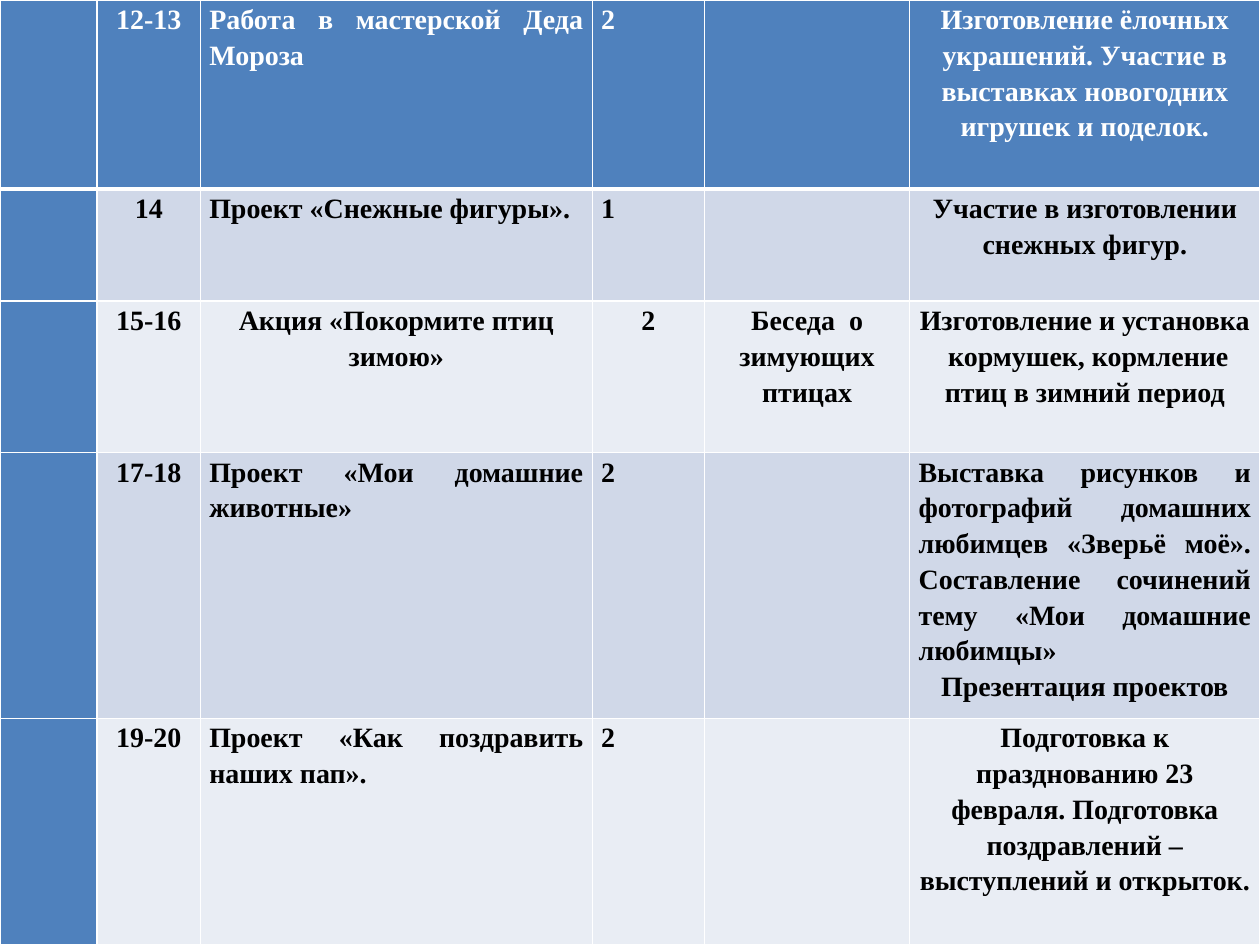
from lxml import etree
from pptx import Presentation
from pptx.dml.color import RGBColor
from pptx.enum.text import PP_ALIGN
from pptx.oxml.ns import qn
from pptx.util import Cm, Pt

CENTER = PP_ALIGN.CENTER
JUSTIFY = PP_ALIGN.JUSTIFY

BLUE, WHITE, BLACK = "4F81BD", "FFFFFF", "000000"
BANDS = ["E9EDF4", "D0D8E8"]
COLUMN_WIDTHS = [1.96, 2.08, 7.9, 2.26, 4.14, 7.06]
ROW_HEIGHTS = [3.81, 2.26, 3.05, 5.36, 4.57]

# Lesson numbers, topic, hours, theory, practice; each cell lists its paragraphs
LESSONS = [
    [[("12-13", CENTER)],
     [("Работа в мастерской Деда Мороза", JUSTIFY)],
     [("2", JUSTIFY)],
     [],
     [("Изготовление ёлочных украшений. Участие в выставках новогодних "
       "игрушек и поделок.", CENTER)]],
    [[("14", CENTER)],
     [("Проект «Снежные фигуры».", JUSTIFY)],
     [("1", JUSTIFY)],
     [],
     [("Участие в изготовлении снежных фигур.", CENTER)]],
    [[("15-16", CENTER)],
     [("Акция «Покормите птиц зимою»", CENTER)],
     [("2", CENTER)],
     [("Беседа  о зимующих птицах", CENTER)],
     [("Изготовление и установка  кормушек, кормление птиц в зимний период",
       CENTER)]],
    [[("17-18", CENTER)],
     [("Проект «Мои домашние животные»", JUSTIFY)],
     [("2", JUSTIFY)],
     [],
     [("Выставка рисунков и фотографий домашних любимцев «Зверьё моё». "
       "Составление сочинений тему «Мои домашние любимцы»", JUSTIFY),
      ("Презентация проектов", CENTER)]],
    [[("19-20", CENTER)],
     [("Проект «Как поздравить наших пап».", JUSTIFY)],
     [("2", JUSTIFY)],
     [],
     [("Подготовка к празднованию 23 февраля. Подготовка поздравлений – "
       "выступлений и открыток.", CENTER)]],
]


def write(paragraph, text, align=CENTER, color=BLACK):
    paragraph.alignment = align
    paragraph.line_spacing = 1.15
    run = paragraph.add_run()
    run.text = text
    run.font.name = "Times New Roman"
    run.font.size = Pt(16)
    run.font.bold = True
    run.font.color.rgb = RGBColor.from_string(color)


def add_border(cell, side, width):
    line = etree.SubElement(cell._tc.get_or_add_tcPr(), qn("a:ln" + side),
                            w=str(Pt(width)))
    fill = etree.SubElement(line, qn("a:solidFill"))
    etree.SubElement(fill, qn("a:srgbClr"), val=WHITE)


presentation = Presentation()
presentation.slide_width = Cm(25.4)
presentation.slide_height = Cm(19.05)
slide = presentation.slides.add_slide(presentation.slide_layouts[6])

# Table grid
shape = slide.shapes.add_table(len(ROW_HEIGHTS), len(COLUMN_WIDTHS), Cm(0), Cm(0),
                               Cm(sum(COLUMN_WIDTHS)), Cm(sum(ROW_HEIGHTS)))
table = shape.table
table.first_col = True
for column, width in zip(table.columns, COLUMN_WIDTHS):
    column.width = Cm(width)
for row, height in zip(table.rows, ROW_HEIGHTS):
    row.height = Cm(height)

# Cells: blue header row and first column, banded body
for row_index, lesson in enumerate(LESSONS):
    header = row_index == 0
    for column_index, paragraphs in enumerate([[]] + lesson):
        cell = table.cell(row_index, column_index)
        borders = {"L": 1, "R": 1, "T": 3 if row_index == 1 else 1,
                   "B": 3 if header else 1}
        for side, width in borders.items():
            add_border(cell, side, width)
        blue = header or column_index == 0
        cell.fill.solid()
        cell.fill.fore_color.rgb = RGBColor.from_string(
            BLUE if blue else BANDS[row_index % 2])
        if not paragraphs:
            continue
        cell.margin_left = cell.margin_right = Cm(0.18)
        cell.margin_top = cell.margin_bottom = Cm(0)
        frame = cell.text_frame
        for index, (text, align) in enumerate(paragraphs):
            paragraph = frame.add_paragraph() if index else frame.paragraphs[0]
            write(paragraph, text, align=align, color=WHITE if header else BLACK)

presentation.save("out.pptx")
